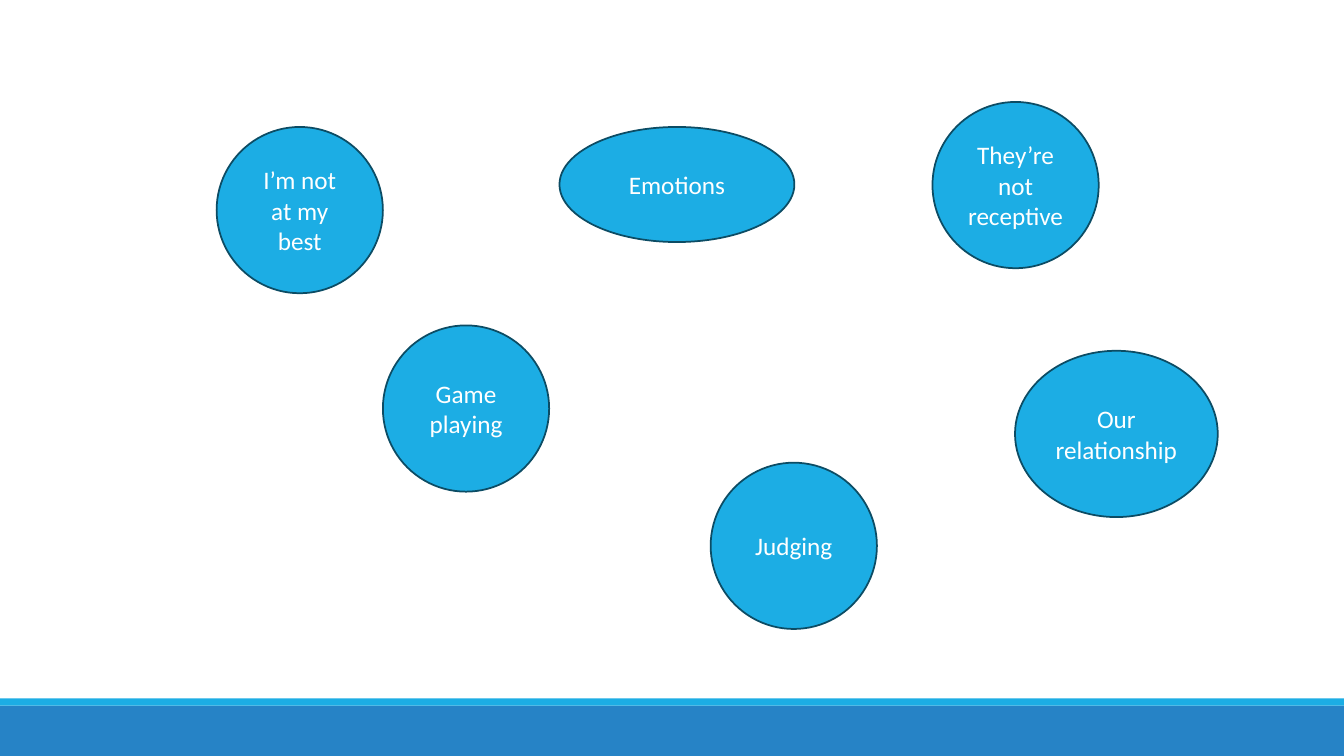
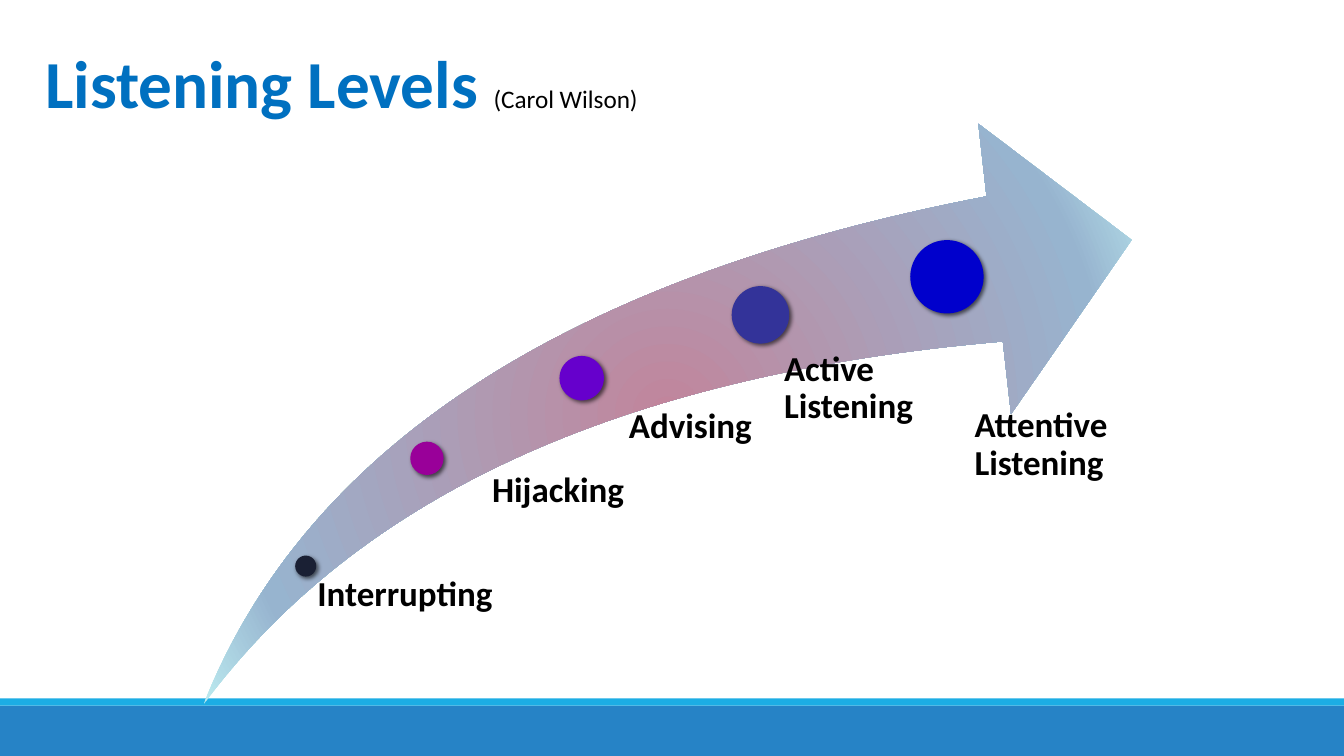
from dataclasses import dataclass
from typing import Any

from pptx import Presentation
from pptx.dml.color import RGBColor
from pptx.enum.shapes import MSO_SHAPE
from pptx.enum.text import MSO_ANCHOR, MSO_AUTO_SIZE, PP_ALIGN
from pptx.oxml import parse_xml
from pptx.oxml.ns import nsdecls, qn
from pptx.shapes.autoshape import Shape
from pptx.slide import Slide
from pptx.util import Cm, Pt

WIDTH, HEIGHT = 33.87, 19.05
FONT = "Calibri"

WHITE = RGBColor(0xFF, 0xFF, 0xFF)
BLACK = RGBColor(0x00, 0x00, 0x00)
BLUE = RGBColor(0x26, 0x83, 0xC6)
CYAN = RGBColor(0x1C, 0xAD, 0xE4)
OUTLINE = RGBColor(0x0C, 0x4C, 0x64)
TITLE_BLUE = RGBColor(0x00, 0x70, 0xC0)
NAVY = RGBColor(0x1A, 0x20, 0x34)
MAGENTA = RGBColor(0x99, 0x00, 0x99)
PURPLE = RGBColor(0x66, 0x00, 0xCC)
INDIGO = RGBColor(0x33, 0x33, 0x99)
DEEP_BLUE = RGBColor(0x00, 0x00, 0xCC)
ROSE = RGBColor(0xC1, 0x85, 0x9C)
STEEL = RGBColor(0x97, 0xB4, 0xCF)
ICE = RGBColor(0xBC, 0xEB, 0xF0)

ARROW_STOPS = ((0, ROSE), (80, STEEL), (100, ICE))

BUBBLE_FONT = {"size": Pt(18), "name": FONT}
LABEL_FONT = {"size": Pt(25), "name": FONT, "bold": True}
TITLE_FONT = {"size": Pt(48), "name": FONT, "bold": True}
SOURCE_FONT = {"size": Pt(18), "name": FONT, "bold": False}


@dataclass(frozen=True)
class Box:
    """A rectangle in centimetres."""
    left: float
    top: float
    width: float = 4.19
    height: float = 4.19

    def lengths(self) -> tuple[Cm, Cm, Cm, Cm]:
        return Cm(self.left), Cm(self.top), Cm(self.width), Cm(self.height)


@dataclass(frozen=True)
class Bubble:
    text: str
    box: Box


@dataclass(frozen=True)
class Level:
    """A dot on the arrow, with the label below it."""
    text: str
    color: RGBColor
    dot: Box
    label: Box
    inset: float


BANDS = (
    (Box(0, 17.78, WIDTH, 1.27), BLUE),
    (Box(0, 17.6, WIDTH, 0.18), CYAN),
)

BUBBLES = (
    Bubble("I’m not at my best", Box(5.46, 3.2)),
    Bubble("Emotions", Box(14.1, 3.2, 5.92, 2.9)),
    Bubble("Game playing", Box(9.65, 8.2)),
    Bubble("Judging", Box(17.91, 11.66)),
    Bubble("They’re not receptive", Box(23.5, 2.57)),
    Bubble("Our relationship", Box(25.58, 8.84, 5.11)),
)

LEVELS = (
    Level("Interrupting", NAVY, Box(7.44, 14, 0.53, 0.53),
          Box(7.72, 14.53, 6.99, 2.95), 0.28),
    Level("Hijacking", MAGENTA, Box(10.34, 11.13, 0.84, 0.84),
          Box(11.94, 11.91, 3.89, 6.12), 0.46),
    Level("Advising", PURPLE, Box(14.1, 8.97, 1.12, 1.12),
          Box(15.27, 10.29, 4.52, 7.39), 0.58),
    Level("Active Listening", INDIGO, Box(18.44, 7.21, 1.45, 1.45),
          Box(19, 8.84, 4.67, 8.23), 0.76),
    Level("Attentive Listening", DEEP_BLUE, Box(22.94, 6.05, 1.85, 1.85),
          Box(23.57, 10.26, 4.67, 3.12), 0.99),
)


def apply(target: Any, values: dict[str, Any]) -> None:
    """Set each named attribute of target."""
    for name, value in values.items():
        setattr(target, name, value)


def add_run(p: Any, text: str, font: dict[str, Any], color: RGBColor) -> None:
    r = p.add_run()
    r.text = text
    apply(r.font, font)
    r.font.color.rgb = color


def add_plain_shape(s: Slide, kind: MSO_SHAPE, box: Box, color: RGBColor) -> Shape:
    """Add a filled shape without line or shadow."""
    sp = s.shapes.add_shape(kind, *box.lengths())
    sp.shadow.inherit = False
    sp.fill.solid()
    sp.fill.fore_color.rgb = color
    sp.line.fill.background()
    return sp


def add_shadow(sp: Shape) -> None:
    sp.element.spPr.find(qn("a:effectLst")).append(parse_xml(
        f'<a:outerShdw {nsdecls("a")} blurRad="{Pt(3)}" dist="{Pt(2)}" '
        f'dir="2700000" algn="tl" rotWithShape="0"><a:srgbClr val="{BLACK}">'
        '<a:alpha val="60000"/></a:srgbClr></a:outerShdw>'))


def set_radial_fill(sp: Shape, stops: tuple[tuple[int, RGBColor], ...]) -> None:
    stop_xml = "".join(
        f'<a:gs pos="{pos * 1000}"><a:srgbClr val="{color}"/></a:gs>'
        for pos, color in stops)
    gradient = parse_xml(
        f'<a:gradFill {nsdecls("a")} rotWithShape="1"><a:gsLst>{stop_xml}</a:gsLst>'
        '<a:path path="circle"><a:fillToRect l="100000" t="100000" '
        'r="100000" b="100000"/></a:path></a:gradFill>')
    spPr = sp.element.spPr
    spPr.replace(spPr.find(qn("a:solidFill")), gradient)


def add_slide(prs: Any) -> Slide:
    """Add a blank slide with the footer bands."""
    s = prs.slides.add_slide(prs.slide_layouts[6])
    for box, color in BANDS:
        add_plain_shape(s, MSO_SHAPE.RECTANGLE, box, color)
    return s


def add_bubble(s: Slide, bubble: Bubble) -> None:
    sp = add_plain_shape(s, MSO_SHAPE.OVAL, bubble.box, CYAN)
    sp.line.color.rgb = OUTLINE
    sp.line.width = Pt(1.25)
    tf = sp.text_frame
    apply(tf, {"word_wrap": True, "vertical_anchor": MSO_ANCHOR.MIDDLE})
    p = tf.paragraphs[0]
    p.alignment = PP_ALIGN.CENTER
    add_run(p, bubble.text, BUBBLE_FONT, WHITE)


def add_arrow(s: Slide) -> None:
    sp = add_plain_shape(s, MSO_SHAPE.SWOOSH_ARROW,
                         Box(5.13, 3.12, 23.39, 14.63), STEEL)
    sp.adjustments[0] = 0.25
    sp.adjustments[1] = 0.25
    set_radial_fill(sp, ARROW_STOPS)


def add_level(s: Slide, level: Level) -> None:
    add_shadow(add_plain_shape(s, MSO_SHAPE.OVAL, level.dot, level.color))
    tf = s.shapes.add_textbox(*level.label.lengths()).text_frame
    apply(tf, {"word_wrap": True, "margin_left": Cm(level.inset),
               "margin_top": 0, "margin_right": 0, "margin_bottom": 0})
    p = tf.paragraphs[0]
    p.line_spacing = 0.9
    add_run(p, level.text, LABEL_FONT, BLACK)


def add_title(s: Slide, title: str, source: str) -> None:
    tf = s.shapes.add_textbox(*Box(0.89, 0.91, 15.6, 2.31).lengths()).text_frame
    apply(tf, {"word_wrap": False, "auto_size": MSO_AUTO_SIZE.SHAPE_TO_FIT_TEXT})
    p = tf.paragraphs[0]
    add_run(p, f"{title} ", TITLE_FONT, TITLE_BLUE)
    add_run(p, source, SOURCE_FONT, BLACK)


def build_barriers(prs: Any) -> None:
    s = add_slide(prs)
    for bubble in BUBBLES:
        add_bubble(s, bubble)


def build_listening_levels(prs: Any) -> None:
    s = add_slide(prs)
    add_arrow(s)
    for level in LEVELS:
        add_level(s, level)
    add_title(s, "Listening Levels", "(Carol Wilson)")


def main() -> None:
    prs = Presentation()
    apply(prs, {"slide_width": Cm(WIDTH), "slide_height": Cm(HEIGHT)})
    build_barriers(prs)
    build_listening_levels(prs)
    prs.save("out.pptx")


if __name__ == "__main__":
    main()
